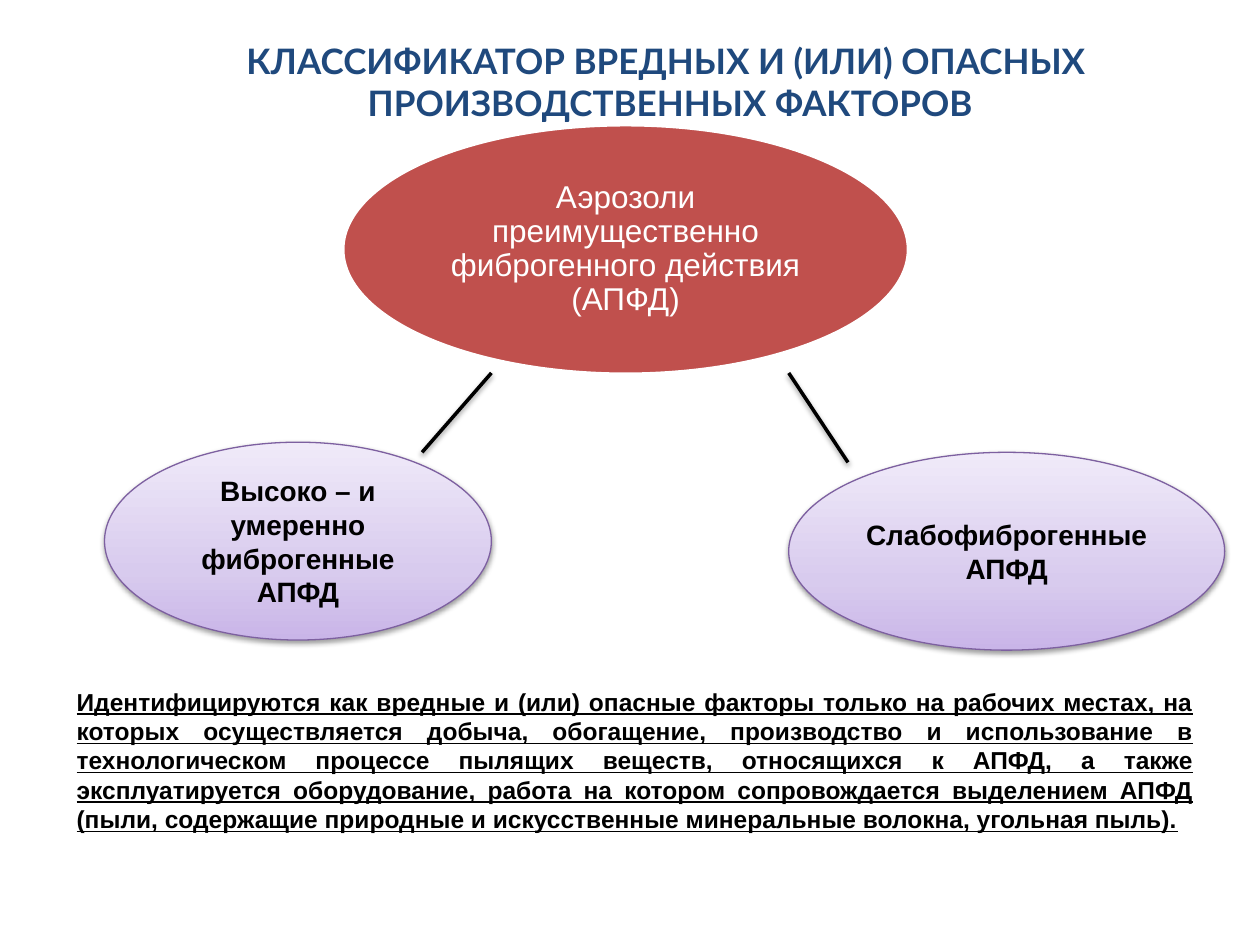
"""Build a slide that classes fibrogenic aerosols as workplace hazards."""
from lxml import etree
from pptx import Presentation
from pptx.dml.color import RGBColor
from pptx.enum.shapes import MSO_CONNECTOR, MSO_SHAPE
from pptx.enum.text import MSO_ANCHOR, PP_ALIGN
from pptx.oxml import parse_xml
from pptx.oxml.ns import nsdecls, qn
from pptx.util import Inches, Pt

OVAL, LINE = MSO_SHAPE.OVAL, MSO_CONNECTOR.STRAIGHT
MID, CENTER, FULL = MSO_ANCHOR.MIDDLE, PP_ALIGN.CENTER, PP_ALIGN.JUSTIFY
NS = nsdecls("a")
BLACK, WHITE = "000000", "FFFFFF"
SHADE = (f'<a:effectLst {NS}><a:outerShdw blurRad="{Pt(3.1)}" dist="{Pt(1.6)}" '
         'dir="5400000" rotWithShape="0"><a:srgbClr val="000000">'
         '<a:alpha val="38000"/></a:srgbClr></a:outerShdw></a:effectLst>')

deck = Presentation()
deck.slide_width, deck.slide_height = Inches(10), Inches(7.5)
slide = deck.slides.add_slide(deck.slide_layouts[6])
shapes = slide.shapes
col, row = deck.slide_width / 100, deck.slide_height / 75


def grid(*cells):
    return [round(n * unit) for n, unit in zip(cells, (col, row, col, row))]


def write(shape, text, size, tone, bold=True, font="Arial", align=CENTER, pad=None):
    frame = shape.text_frame
    frame.word_wrap = True
    frame.vertical_anchor = MID
    if pad is not None:
        frame.margin_left = frame.margin_right = Inches(pad)
        frame.margin_top = frame.margin_bottom = Inches(pad)
    para = frame.paragraphs[0]
    para.text = text
    para.alignment = align
    for run in para.runs:
        run.font.name, run.font.size, run.font.bold = font, Pt(size), bold
        run.font.color.rgb = RGBColor.from_string(tone)
    return para


stops = [(0, "C9B5E8"), (35, "D8CBEE"), (100, "F0EAF9")]
marks = "".join(f'<a:gs pos="{at * 1000}"><a:srgbClr val="{tone}"/></a:gs>'
                for at, tone in stops)
blend = (f'<a:gradFill {NS} rotWithShape="1"><a:gsLst>{marks}</a:gsLst>'
         '<a:lin ang="16200000" scaled="0"/></a:gradFill>')

kinds = [("Высоко – и умеренно фиброгенные АПФД", (8.3, 35.1, 30.7, 15.7)),
         ("Слабофиброгенные АПФД", (62.6, 35.9, 34.6, 15.7))]
for text, cells in kinds:
    kind = shapes.add_shape(OVAL, *grid(*cells))
    kind.line.color.rgb = RGBColor.from_string("7D60A0")
    kind.line.width = Pt(0.75)
    props = kind._element.spPr
    props.find(qn("a:prstGeom")).addnext(parse_xml(blend))
    props.append(parse_xml(SHADE))
    write(kind, text, 16, BLACK)

for ends in [(39, 29.6, 33.5, 35.9), (62.6, 29.6, 67.3, 36.7)]:
    link = shapes.add_connector(LINE, *grid(*ends))
    link.line.color.rgb = RGBColor.from_string(BLACK)
    link.line.width = Pt(2)
    etree.ElementBase.append(link._element.spPr, parse_xml(SHADE))

note = shapes.add_textbox(*grid(5.1, 54, 90.6, 12.8))
para = write(
    note,
    "Идентифицируются как вредные и (или) опасные факторы только на рабочих "
    "местах, на которых осуществляется добыча, обогащение, производство и "
    "использование в технологическом процессе пылящих веществ, относящихся к "
    "АПФД, а также эксплуатируется оборудование, работа на котором "
    "сопровождается выделением АПФД (пыли, содержащие природные и "
    "искусственные минеральные волокна, угольная пыль).",
    14, BLACK, align=FULL)
para.runs[0].font.underline = True
note.text_frame.vertical_anchor = MSO_ANCHOR.TOP

root = shapes.add_shape(OVAL, *grid(27.2, 9.9, 44.9, 19.8))
root.shadow.inherit = False
root.fill.solid()
root.fill.fore_color.rgb = RGBColor.from_string("C0504D")
root.line.color.rgb = RGBColor.from_string(WHITE)
root.line.width = Pt(2)

label = shapes.add_textbox(*grid(33.8, 12.8, 31.7, 14))
para = write(label, "Аэрозоли преимущественно фиброгенного действия (АПФД)",
             18, WHITE, bold=False, pad=0.02)
para.line_spacing = 0.9

title = shapes.add_textbox(*grid(8.3, 0.6, 89.8, 11.8))
write(title, "КЛАССИФИКАТОР ВРЕДНЫХ И (ИЛИ) ОПАСНЫХ \vПРОИЗВОДСТВЕННЫХ ФАКТОРОВ",
      20, "1F497D", font="Lato", pad=0)
title.text_frame.word_wrap = False

deck.save("out.pptx")
